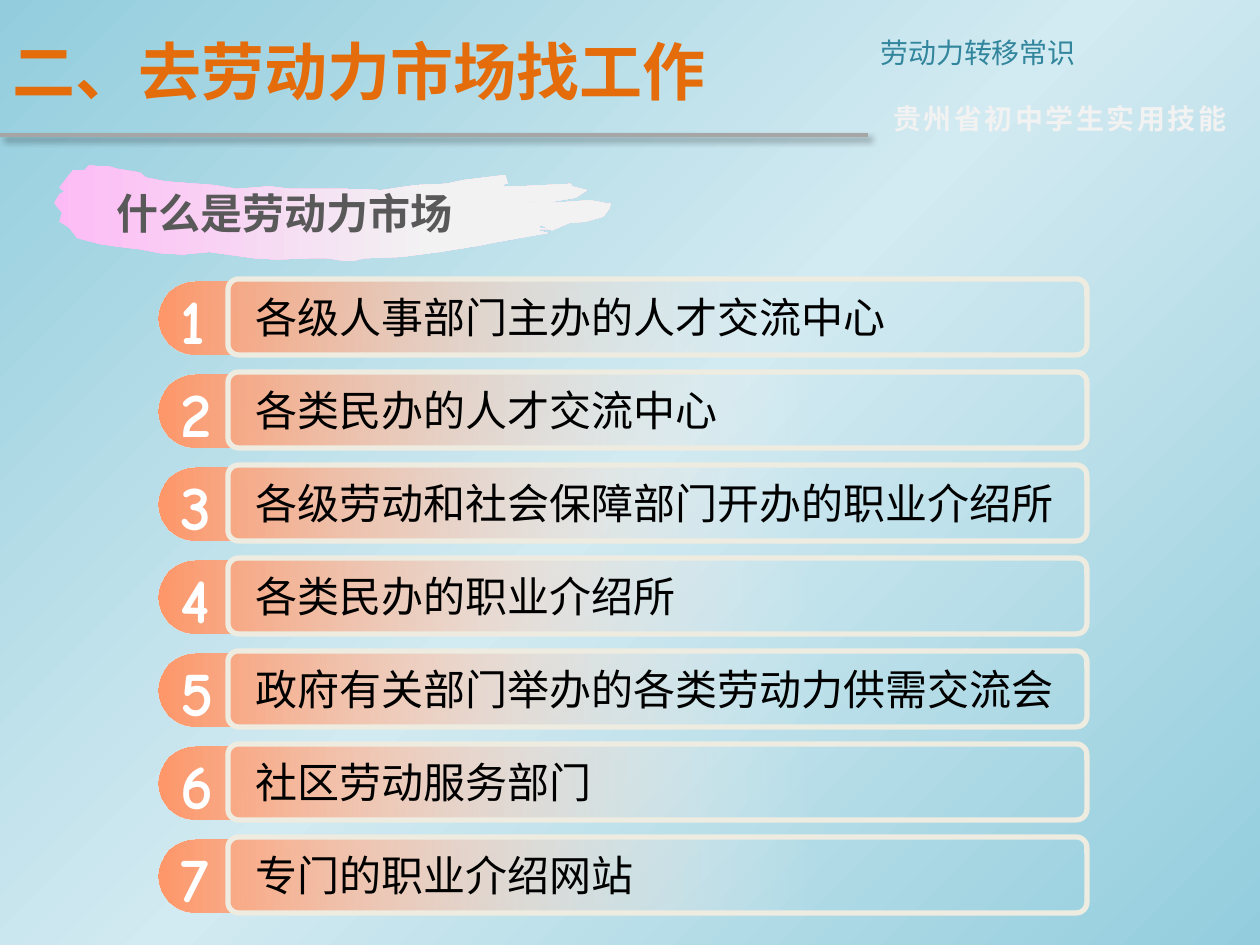
import pptx
import pptx.util
import pptx.dml.color
import pptx.enum.shapes
import pptx.enum.text
import pptx.oxml
import pptx.oxml.ns
from lxml import etree

PX = 914400 / 126  # EMU in one px
RGB = pptx.dml.color.RGBColor
SKY, PALE_SKY = RGB(0x93, 0xCD, 0xDD), RGB(0xD2, 0xEA, 0xF1)
ORANGE, TEAL, GREY = RGB(0xE4, 0x6C, 0x0A), RGB(0x31, 0x85, 0x9C), RGB(0x59, 0x59, 0x59)
CORAL, WHITE, BLACK = RGB(0xFF, 0x97, 0x69), RGB(0xFF, 0xFF, 0xFF), RGB(0, 0, 0)
PINK, MIST = RGB(0xFD, 0xBB, 0xF5), RGB(0xF2, 0xF2, 0xF2)
CREAM, RULE_GREY = RGB(0xEE, 0xEC, 0xE1), RGB(0xA6, 0xA6, 0xA6)
SANS = "Noto Sans CJK SC"
ALIGN = pptx.enum.text.PP_ALIGN
ANCHOR = pptx.enum.text.MSO_ANCHOR
FIT = pptx.enum.text.MSO_AUTO_SIZE
ROUND_RECT = pptx.enum.shapes.MSO_SHAPE.ROUNDED_RECTANGLE
qn = pptx.oxml.ns.qn


def write(shape, text, size, color, font=SANS, bold=False, align=ALIGN.LEFT,
          anchor=ANCHOR.TOP, wrap=True, fit=FIT.NONE, spacing=0):
    frame = shape.text_frame
    frame.word_wrap, frame.auto_size, frame.vertical_anchor = wrap, fit, anchor
    paragraph = frame.paragraphs[0]
    paragraph.alignment = align
    run = paragraph.add_run()
    run.text = text
    run.font.size, run.font.bold, run.font.name = pptx.util.Pt(size), bold, font
    run.font.color.rgb = color
    properties = run.font._element
    etree.SubElement(properties, qn("a:ea"), typeface=SANS)
    if spacing:
        properties.set("spc", str(spacing))


def gradient(owner, fill, angle, stops):
    """Stops are (percent, colour, opacity percent)."""
    fill.gradient()
    grad = next(owner.element.iter(qn("a:gradFill")))
    for child in list(grad):
        grad.remove(child)
    stop_list = etree.SubElement(grad, qn("a:gsLst"))
    for position, color, opacity in stops:
        stop = etree.SubElement(stop_list, qn("a:gs"), pos=str(position * 1000))
        tint = etree.SubElement(stop, qn("a:srgbClr"), val=str(color))
        if opacity < 100:
            etree.SubElement(tint, qn("a:alpha"), val=str(opacity * 1000))
    etree.SubElement(grad, qn("a:lin"), ang=str(angle * 60000), scaled="0")


deck = pptx.Presentation()
deck.slide_width, deck.slide_height = pptx.util.Inches(10), pptx.util.Inches(7.5)
slide = deck.slides.add_slide(deck.slide_layouts[5])
shapes = slide.shapes

# Background
gradient(slide, slide.background.fill, 45,
         [(0, SKY, 100), (50, PALE_SKY, 100), (100, SKY, 100)])

# Title with the rule below it
title = shapes.title
title.left, title.top, title.width, title.height = [round(v * PX) for v in (0, 6, 868, 129)]
write(title, "二、去劳动力市场找工作", 36, ORANGE, bold=True, anchor=ANCHOR.MIDDLE)

rule = shapes.add_connector(pptx.enum.shapes.MSO_CONNECTOR.STRAIGHT,
                            *[round(v * PX) for v in (0, 135, 868, 135)])
rule.line.color.rgb = RULE_GREY
rule.line.width = pptx.util.Pt(2.25)
rule.element.spPr.append(pptx.oxml.parse_xml(
    f'<a:effectLst {pptx.oxml.ns.nsdecls("a")}>'
    '<a:outerShdw blurRad="50800" dist="38100" dir="2700000" algn="tl" rotWithShape="0">'
    '<a:srgbClr val="000000"><a:alpha val="40000"/></a:srgbClr>'
    '</a:outerShdw></a:effectLst>'))

# Course name and series name
course = shapes.add_textbox(*[round(v * PX) for v in (868, 29, 392, 47)])
write(course, "劳动力转移常识", 16, TEAL, align=ALIGN.JUSTIFY)
series = shapes.add_textbox(*[round(v * PX) for v in (881, 95, 372, 47)])
write(series, "贵州省初中学生实用技能", 16, MIST, bold=True, spacing=150)

# Brush stroke, outlined in hundredths of an inch
stroke_points = [
    (71, 131), (67, 135), (58, 135), (53, 141), (47, 149), (49, 151), (51, 152), (47, 154),
    (43, 161), (45, 164), (49, 169), (47, 176), (55, 181), (61, 189), (80, 194), (95, 196),
    (112, 198), (127, 201), (145, 202), (166, 200), (202, 205), (220, 206), (246, 205),
    (260, 205), (273, 207), (281, 207), (289, 205), (318, 204), (349, 200), (380, 195),
    (390, 193), (412, 189), (435, 185), (427, 183), (429, 182), (436, 182), (429, 181),
    (427, 180), (430, 179), (438, 183), (452, 177), (465, 176), (479, 172), (484, 165),
    (485, 162), (468, 159), (441, 161), (416, 161), (419, 160), (433, 161), (457, 157),
    (466, 151), (454, 148), (453, 146), (412, 148), (399, 148), (401, 146), (403, 146),
    (401, 139), (368, 143), (354, 146), (330, 147), (303, 151), (274, 150), (248, 150),
    (230, 150), (214, 148), (188, 150), (176, 148), (170, 147), (131, 144), (116, 141),
    (111, 137), (93, 134), (86, 132), (78, 132)]
outline = shapes.build_freeform(*stroke_points[0], scale=9144)
outline.add_line_segments(stroke_points[1:], close=True)
stroke = outline.convert_to_shape()
stroke.shadow.inherit = False
stroke.line.fill.background()
gradient(stroke, stroke.fill, 0, [(0, PINK, 100), (68, MIST, 100)])

heading = shapes.add_shape(ROUND_RECT, *[round(v * PX) for v in (100, 175, 440, 76)])
heading.shadow.inherit = False
heading.fill.background()
heading.line.fill.background()
write(heading, "什么是劳动力市场", 24, GREY, font="Calibri", bold=True, anchor=ANCHOR.MIDDLE)

# Numbered list of labour markets
markets = [
    "各级人事部门主办的人才交流中心",
    "各类民办的人才交流中心",
    "各级劳动和社会保障部门开办的职业介绍所",
    "各类民办的职业介绍所",
    "政府有关部门举办的各类劳动力供需交流会",
    "社区劳动服务部门",
    "专门的职业介绍网站",
]
ROW_TOP, ROW_PITCH = 282, 93
for index, market in enumerate(markets):
    top = ROW_TOP + index * ROW_PITCH

    capsule = shapes.add_shape(ROUND_RECT, *[round(v * PX) for v in (159, top, 665, 73)])
    capsule.adjustments[0] = 0.5
    capsule.shadow.inherit = False
    capsule.line.fill.background()
    gradient(capsule, capsule.fill, 0, [(0, CORAL, 100), (100, WHITE, 0)])

    label = shapes.add_textbox(*[round(v * PX) for v in (243, top + 3, 843, 63)])
    write(label, market, 24, BLACK)

    frame = shapes.add_shape(ROUND_RECT, *[round(v * PX) for v in (228, top - 3, 859, 76)])
    frame.adjustments[0] = 0.14
    frame.shadow.inherit = False
    frame.fill.background()
    frame.line.color.rgb = CREAM
    frame.line.width = pptx.util.Pt(3)

    number = shapes.add_textbox(*[round(v * PX) for v in (168, top - 7, 48, 89)])
    write(number, str(index + 1), 36, WHITE, font="Comic Neue", bold=True,
          wrap=False, fit=FIT.SHAPE_TO_FIT_TEXT)

deck.save("out.pptx")
